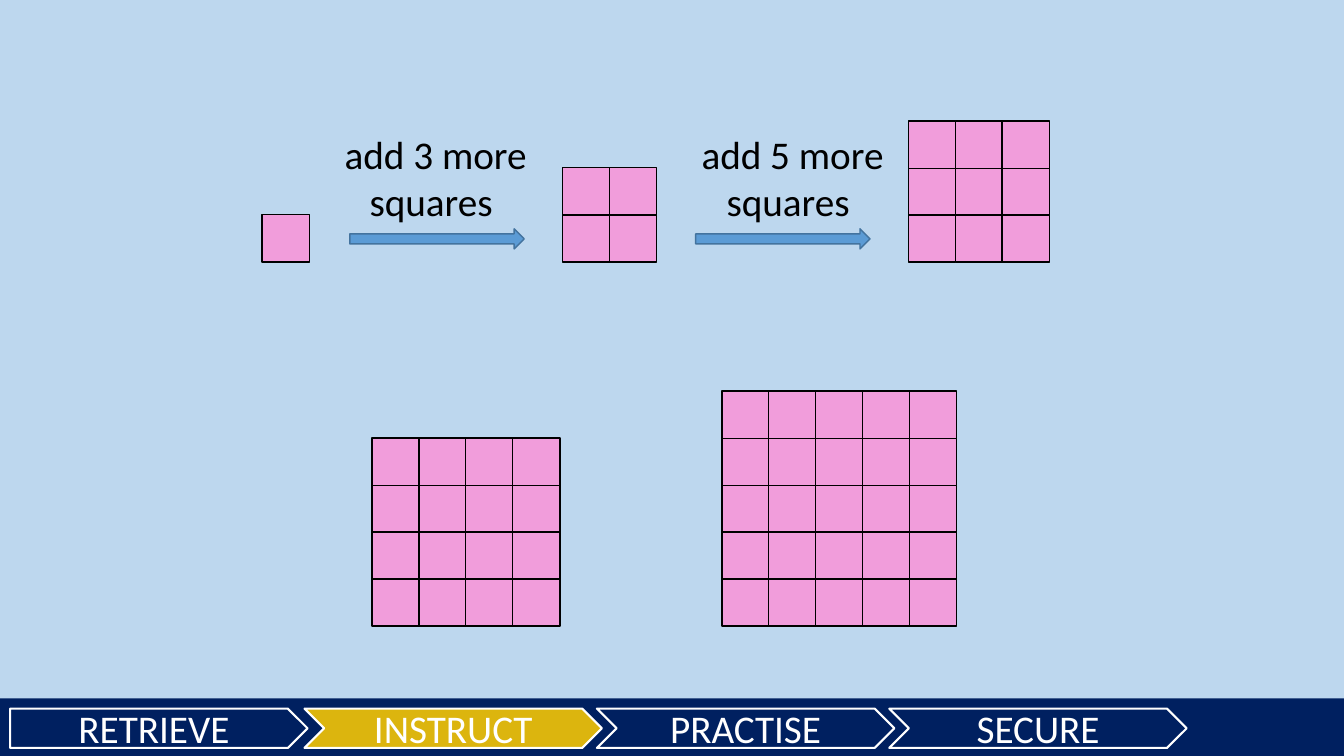
"""Build a slide of growing square numbers above a lesson stage bar."""
from dataclasses import dataclass

import pptx
import pptx.dml.color
import pptx.enum.shapes
import pptx.enum.text
import pptx.util

Inches = pptx.util.Inches
SHAPES = pptx.enum.shapes.MSO_SHAPE

STAGES = ["RETRIEVE", "INSTRUCT", "PRACTISE", "SECURE"]
CURRENT_STAGE = "INSTRUCT"
STAGE_LEFTS = [0.1, 3.02, 5.92, 8.82]

SQUARE_NUMBERS = [
    {"side": 1, "left": 2.6, "bottom": 2.6},
    {"side": 2, "left": 5.58, "bottom": 2.6},
    {"side": 3, "left": 9.01, "bottom": 2.6},
    {"side": 4, "left": 3.69, "bottom": 6.21},
    {"side": 5, "left": 7.16, "bottom": 6.21},
]
STEPS = [
    {"text": "add 3 more squares ", "text_left": 3.23, "arrow_left": 3.47},
    {"text": "add 5 more squares ", "text_left": 6.77, "arrow_left": 6.9},
]
SQUARE_SIZE = 0.47
SQUARE_PITCH = 0.93 / 2


@dataclass(frozen=True)
class Theme:
    """Colours and type of the slide."""
    background: str = "BDD7EE"
    navy: str = "002060"
    gold: str = "DCB50E"
    pink: str = "F19DDB"
    arrow: str = "5B9BD5"
    arrow_line: str = "43739E"
    white: str = "FFFFFF"
    black: str = "000000"
    font: str = "Calibri"
    text_size: int = 28


THEME = Theme()


def color(value):
    """Turn a hex value into a colour."""
    return pptx.dml.color.RGBColor.from_string(value)


def add_shape(slide, kind, box, fill, line=None, line_width=1):
    """Add a flat preset shape."""
    shape = slide.shapes.add_shape(kind, *map(Inches, box))
    shape.shadow.inherit = False
    shape.fill.solid()
    shape.fill.fore_color.rgb = color(fill)
    if line is None:
        shape.line.fill.background()
    else:
        shape.line.color.rgb = color(line)
        shape.line.width = pptx.util.Pt(line_width)
    return shape


def write(shape, text, text_color):
    """Set centred text in the theme font."""
    shape.text_frame.word_wrap = True
    paragraph = shape.text_frame.paragraphs[0]
    paragraph.text = text
    paragraph.alignment = pptx.enum.text.PP_ALIGN.CENTER
    font = paragraph.runs[0].font
    font.name = THEME.font
    font.size = pptx.util.Pt(THEME.text_size)
    font.color.rgb = color(text_color)


def add_stage_bar(slide):
    """Add the bar of lesson stages."""
    add_shape(slide, SHAPES.RECTANGLE, (0, 6.93, 13.33, 0.57), THEME.navy)
    for stage, left in zip(STAGES, STAGE_LEFTS):
        kind = SHAPES.PENTAGON if stage == STAGES[0] else SHAPES.CHEVRON
        fill = THEME.gold if stage == CURRENT_STAGE else THEME.navy
        shape = add_shape(slide, kind, (left, 7.03, 2.95, 0.39), fill, THEME.white, 1.5)
        shape.text_frame.vertical_anchor = pptx.enum.text.MSO_ANCHOR.MIDDLE
        write(shape, stage, THEME.white)


def add_square_number(slide, side, left, bottom):
    """Add a square grid, built up from its bottom left corner."""
    for row in range(side):
        for column in range(side):
            box = (left + column * SQUARE_PITCH,
                   bottom - SQUARE_SIZE - row * SQUARE_PITCH,
                   SQUARE_SIZE, SQUARE_SIZE)
            add_shape(slide, SHAPES.RECTANGLE, box, THEME.pink, THEME.black)


def add_step(slide, text, text_left, arrow_left):
    """Add an arrow with its label."""
    add_shape(slide, SHAPES.RIGHT_ARROW, (arrow_left, 2.27, 1.73, 0.2),
              THEME.arrow, THEME.arrow_line)
    label = slide.shapes.add_textbox(*map(Inches, (text_left, 1.24, 2.18, 1.04)))
    write(label, text, THEME.black)


def main():
    """Build and save the presentation."""
    presentation = pptx.Presentation()
    presentation.slide_width = Inches(13.33)
    presentation.slide_height = Inches(7.5)
    slide = presentation.slides.add_slide(presentation.slide_layouts[6])
    slide.background.fill.solid()
    slide.background.fill.fore_color.rgb = color(THEME.background)
    add_stage_bar(slide)
    for square_number in SQUARE_NUMBERS:
        add_square_number(slide, **square_number)
    for step in STEPS:
        add_step(slide, **step)
    presentation.save("out.pptx")


if __name__ == "__main__":
    main()
